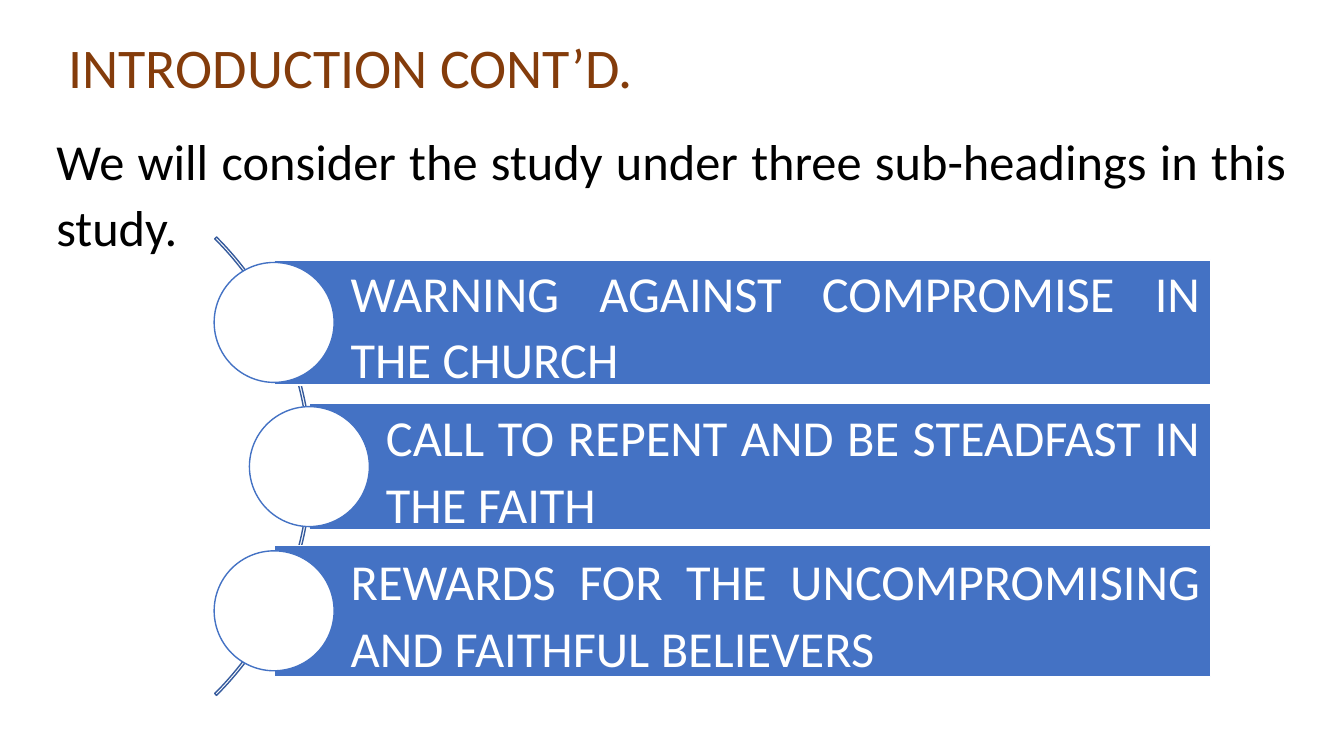
from dataclasses import dataclass

from pptx import Presentation
from pptx.dml.color import RGBColor
from pptx.enum.shapes import MSO_SHAPE
from pptx.enum.text import MSO_ANCHOR, PP_ALIGN
from pptx.shapes.autoshape import Shape
from pptx.slide import Slide
from pptx.util import Pt


@dataclass(frozen=True)
class Theme:
    font: str = "Calibri"
    head: float = 40
    body: float = 36
    brown: str = "843C0B"
    black: str = "000000"
    white: str = "FFFFFF"
    blue: str = "4472C4"
    navy: str = "365B9D"


@dataclass(frozen=True)
class Box:
    left: float
    top: float
    width: float
    height: float


@dataclass(frozen=True)
class Style:
    size: float
    color: str
    anchor: MSO_ANCHOR
    lines: float = 1.1
    after: float = 6
    inset: tuple[float, float, float, float] = (7.2, 3.6, 7.2, 3.6)


@dataclass(frozen=True)
class Topic:
    text: str
    left: float
    height: float


THEME = Theme()
TITLE = Style(THEME.head, THEME.brown, MSO_ANCHOR.BOTTOM, lines=0.9, after=0)
INTRO = Style(THEME.body, THEME.black, MSO_ANCHOR.TOP)
LABEL = Style(THEME.body, THEME.white, MSO_ANCHOR.MIDDLE, inset=(54.7, 7.2, 7.2, 7.2))
TOPICS = [
    Topic("WARNING AGAINST COMPROMISE IN THE CHURCH", 195.8, 89.3),
    Topic("CALL TO REPENT AND BE STEADFAST IN THE FAITH", 221, 90.7),
    Topic("REWARDS FOR THE UNCOMPROMISING AND FAITHFUL BELIEVERS", 195.8, 93.6),
]
RIGHT = 864.7
FIRST = 230.3
PITCH = 103
DISC = 85.7


def points(box: Box) -> tuple[Pt, Pt, Pt, Pt]:
    return Pt(box.left), Pt(box.top), Pt(box.width), Pt(box.height)


def write(shape: Shape, text: str, style: Style) -> None:
    frame = shape.text_frame
    frame.text = text
    frame.word_wrap = True
    frame.vertical_anchor = style.anchor
    left, top, right, bottom = style.inset
    frame.margin_left, frame.margin_top = Pt(left), Pt(top)
    frame.margin_right, frame.margin_bottom = Pt(right), Pt(bottom)
    for part in frame.paragraphs:
        part.alignment = PP_ALIGN.JUSTIFY
        part.line_spacing = style.lines
        part.space_before = Pt(0)
        part.space_after = Pt(style.after)
        for run in part.runs:
            run.font.name = THEME.font
            run.font.size = Pt(style.size)
            run.font.color.rgb = RGBColor.from_string(style.color)


def add_text(slide: Slide, box: Box, text: str, style: Style) -> None:
    write(slide.shapes.add_textbox(*points(box)), text, style)


def add_form(slide: Slide, kind: MSO_SHAPE, box: Box, line: str, fill: str | None = None) -> Shape:
    shape = slide.shapes.add_shape(kind, *points(box))
    shape.shadow.inherit = False
    shape.line.color.rgb = RGBColor.from_string(line)
    shape.line.width = Pt(1)
    if fill is None:
        shape.fill.background()
    else:
        shape.fill.solid()
        shape.fill.fore_color.rgb = RGBColor.from_string(fill)
    return shape


def add_arc(slide: Slide) -> None:
    arc = add_form(slide, MSO_SHAPE.BLOCK_ARC, Box(-240.5, 101.5, 463, 463), THEME.navy)
    for index, value in enumerate((189, 27, 0.004)):
        arc.adjustments[index] = value


def add_topic(slide: Slide, topic: Topic, middle: float) -> None:
    bar = Box(topic.left, middle - topic.height / 2, RIGHT - topic.left, topic.height)
    disc = Box(topic.left - DISC / 2, middle - DISC / 2, DISC, DISC)
    write(add_form(slide, MSO_SHAPE.RECTANGLE, bar, THEME.white, THEME.blue), topic.text, LABEL)
    add_form(slide, MSO_SHAPE.OVAL, disc, THEME.blue, THEME.white)


def main() -> None:
    deck = Presentation()
    deck.slide_width, deck.slide_height = Pt(960), Pt(540)
    slide = deck.slides.add_slide(deck.slide_layouts[6])
    add_arc(slide)
    for index, topic in enumerate(TOPICS):
        add_topic(slide, topic, FIRST + index * PITCH)
    add_text(
        slide,
        Box(33.1, 85, 893.5, 100.8),
        "We will consider the study under three sub-headings in this study.",
        INTRO,
    )
    add_text(slide, Box(41.8, 21.6, 867.6, 54), "INTRODUCTION CONT’D.", TITLE)
    deck.save("out.pptx")


if __name__ == "__main__":
    main()
